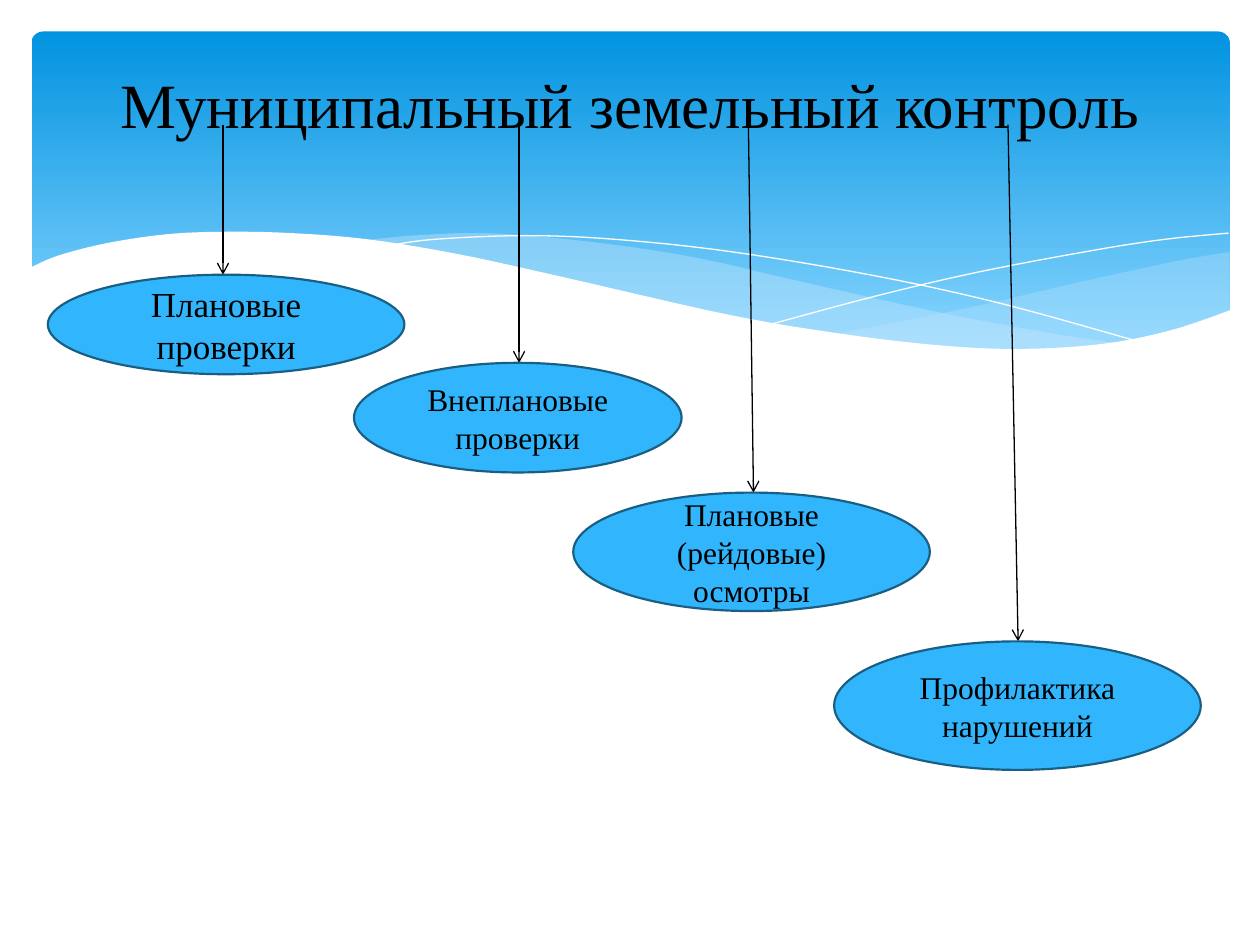
"""Build a slide on the forms of municipal land control."""
import pptx
import pptx.dml.color
import pptx.enum.shapes
import pptx.enum.text
import pptx.oxml
import pptx.oxml.ns
import pptx.util

Inches, Pt = pptx.util.Inches, pptx.util.Pt
RGB = pptx.dml.color.RGBColor.from_string
SHAPES = pptx.enum.shapes.MSO_SHAPE
ALIGN = pptx.enum.text.PP_ALIGN
FONT = "Times New Roman"
COLORS = {"top": "0293E0", "bottom": "83D3FE", "wave": "C6E7FC", "white": "FFFFFF",
          "oval": "31B6FD", "edge": "195F84", "text": "000000"}


def smooth(points, steps=6):
    """Return points along a Catmull-Rom curve through the given points."""
    ends = [points[0]] + points + [points[-1]]
    curve = [points[0]]
    for a, b, c, d in zip(ends, ends[1:], ends[2:], ends[3:]):
        for i in range(1, steps + 1):
            t = i / steps
            curve.append(tuple(
                0.5 * (2 * q + (u - p) * t + (2 * p - 5 * q + 4 * u - v) * t ** 2
                       + (3 * q - p - 3 * u + v) * t ** 3)
                for p, q, u, v in zip(a, b, c, d)))
    return curve


def format_text(tf, size):
    """Centre the text and set its font."""
    for p in tf.paragraphs:
        p.alignment = ALIGN.CENTER
        for r in p.runs:
            r.font.name = FONT
            r.font.size = Pt(size)
            r.font.color.rgb = RGB(COLORS["text"])


prs = pptx.Presentation()
prs.slide_width, prs.slide_height = Inches(10), Inches(7.5)
s = prs.slides.add_slide(prs.slide_layouts[5])

banner = s.shapes.add_shape(SHAPES.ROUNDED_RECTANGLE, Inches(0.25), Inches(0.25),
                            Inches(9.51), Inches(2.7))
banner.shadow.inherit = False
banner.adjustments[0] = 0.034
banner.line.fill.background()
banner.fill.gradient()
banner.fill.gradient_angle = 270
for stop, position, color in zip(banner.fill.gradient_stops, (0, 0.9), ("top", "bottom")):
    stop.position = position
    stop.color.rgb = RGB(COLORS[color])

right_wave = smooth([(9.76, 2), (9.35, 2.07), (8.61, 2.23), (7.79, 2.42), (7.06, 2.57),
                     (6.61, 2.65)])
right_wave += smooth([(6.61, 2.65), (7.05, 2.71), (7.57, 2.76), (8.14, 2.78), (8.72, 2.74),
                      (9.28, 2.63), (9.76, 2.47)])
middle_wave = smooth([(8.93, 2.73), (8.37, 2.65), (7.41, 2.47), (6.29, 2.22), (5.69, 2.08),
                      (5.14, 1.98), (4.42, 1.89), (3.8, 1.85), (3.28, 1.87), (2.86, 1.91)])
middle_wave += smooth([(2.86, 1.91), (3.62, 2.03), (4.49, 2.22), (5.3, 2.4), (6.18, 2.58),
                       (6.95, 2.7), (7.61, 2.77), (8.18, 2.78), (8.93, 2.73)])
falling_line = smooth([(3.09, 1.95), (3.44, 1.9), (4.16, 1.87), (4.89, 1.9), (5.82, 2),
                       (6.95, 2.19), (7.95, 2.41), (9.07, 2.72)])
rising_line = smooth([(6.13, 2.57), (6.95, 2.35), (7.76, 2.16), (8.66, 1.99), (9.24, 1.9),
                      (9.75, 1.85)])
white_wave = smooth([(9.77, 2.46), (9.3, 2.62), (8.75, 2.73), (8.09, 2.77), (7.44, 2.74),
                     (6.68, 2.65), (5.79, 2.5), (4.47, 2.2), (3.65, 2.02), (2.92, 1.9),
                     (2.3, 1.85), (1.77, 1.84), (1.32, 1.86), (0.85, 1.93), (0.46, 2.03),
                     (0.23, 2.13)])
white_wave += [(0.23, 3.29), (9.77, 3.29)]

for points, color, opacity in ((right_wave, "wave", 29), (middle_wave, "wave", 40),
                               (falling_line, None, 100), (rising_line, None, 100),
                               (white_wave, "white", 100)):
    points = [(Inches(x), Inches(y)) for x, y in points]
    builder = s.shapes.build_freeform(*points[0])
    builder.add_line_segments(points[1:], close=color is not None)
    sp = builder.convert_to_shape()
    sp.shadow.inherit = False
    if color is None:
        sp.fill.background()
        sp.line.color.rgb = RGB(COLORS["white"])
        sp.line.width = Pt(0)
        continue
    sp.line.fill.background()
    sp.fill.solid()
    sp.fill.fore_color.rgb = RGB(COLORS[color])
    if opacity < 100:
        srgb = sp._element.spPr.find(".//" + pptx.oxml.ns.qn("a:srgbClr"))
        srgb.append(pptx.oxml.parse_xml(
            f'<a:alpha {pptx.oxml.ns.nsdecls("a")} val="{opacity * 1000}"/>'))

title = s.shapes.title
s.shapes._spTree.append(title._element)
title.left, title.top, title.width, title.height = (
    Inches(0.5), Inches(0.37), Inches(9), Inches(1.37))
tf = title.text_frame
tf.text = "Муниципальный земельный контроль"
tf.auto_size = pptx.enum.text.MSO_AUTO_SIZE.NONE
tf.vertical_anchor = pptx.enum.text.MSO_ANCHOR.TOP
tf.margin_top = Inches(0.15)
format_text(tf, 36)

ovals = [
    ("Плановые проверки", 20, 0.38, 2.18, 2.83, 0.79, 1.77, 1.77),
    ("Внеплановые проверки", 18, 2.81, 2.88, 2.6, 0.87, 4.12, 4.12),
    ("Плановые (рейдовые) осмотры", 18, 4.55, 3.91, 2.83, 0.94, 5.94, 5.98),
    ("Профилактика нарушений", 18, 6.62, 5.09, 2.91, 1.02, 8, 8.08),
]
for text, size, left, top, width, height, start_x, end_x in ovals:
    arrow = s.shapes.add_connector(pptx.enum.shapes.MSO_CONNECTOR.STRAIGHT, Inches(start_x),
                                   Inches(0.99), Inches(end_x), Inches(top))
    arrow.line.color.rgb = RGB(COLORS["text"])
    arrow.line.width = Pt(0.75)
    arrow.line._get_or_add_ln().append(pptx.oxml.parse_xml(
        f'<a:tailEnd {pptx.oxml.ns.nsdecls("a")} type="arrow"/>'))
    arrow._element.spPr.append(pptx.oxml.parse_xml(
        f'<a:effectLst {pptx.oxml.ns.nsdecls("a")}/>'))

    sp = s.shapes.add_shape(SHAPES.OVAL, Inches(left), Inches(top), Inches(width),
                            Inches(height))
    sp.shadow.inherit = False
    sp.fill.solid()
    sp.fill.fore_color.rgb = RGB(COLORS["oval"])
    sp.line.color.rgb = RGB(COLORS["edge"])
    sp.line.width = Pt(1.25)
    sp.text_frame.text = text
    sp.text_frame.word_wrap = True
    format_text(sp.text_frame, size)

prs.save("out.pptx")
